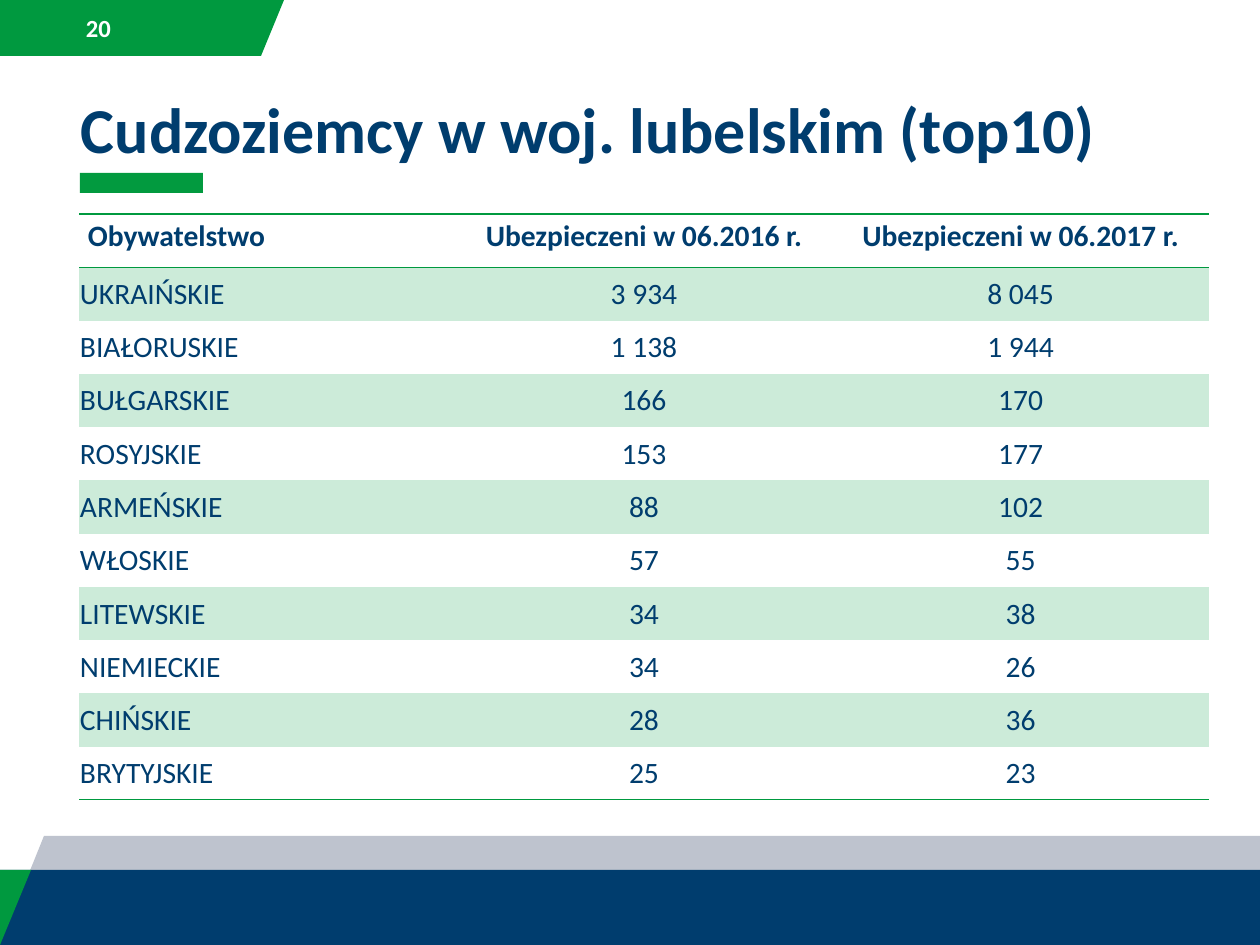
import pptx
import pptx.util
import pptx.dml.color
import pptx.enum.shapes
import pptx.enum.text
import pptx.oxml
import pptx.oxml.ns

PX = 10320
THEME = {
    "font": "Calibri",
    "green": "00993F", "accent": "029A3F", "navy": "003D6E",
    "grey": "BEC3CE", "band": "CCEBD9", "white": "FFFFFF",
    "title": 52, "cell": 24, "number": 20,
}
ALIGN = pptx.enum.text.PP_ALIGN
ANCHOR = pptx.enum.text.MSO_ANCHOR


def paint(shape, color):
    shape.shadow.inherit = False
    shape.fill.solid()
    shape.fill.fore_color.rgb = pptx.dml.color.RGBColor.from_string(THEME[color])
    shape.line.fill.background()


def style(para, size, color, bold):
    for span in para.runs:
        span.font.name = THEME["font"]
        span.font.size = pptx.util.Pt(THEME[size])
        span.font.bold = bold
        span.font.color.rgb = pptx.dml.color.RGBColor.from_string(THEME[color])


deck = pptx.Presentation()
deck.slide_width = 1260 * PX
deck.slide_height = 945 * PX
page = deck.slides.add_slide(deck.slide_layouts[6])

outlines = [
    ("green", [(0, 0), (284, 0), (261, 56), (0, 56)]),
    ("grey", [(0, 945), (44, 836), (1260, 836), (1260, 945)]),
    ("navy", [(0, 870), (1260, 870), (1260, 945), (0, 945)]),
    ("green", [(0, 870), (31, 870), (0, 945)]),
    ("accent", [(80, 173), (203, 173), (203, 193), (80, 193)]),
]
for color, points in outlines:
    xs, ys = zip(*points)
    left, top, right, bottom = min(xs), min(ys), max(xs), max(ys)
    if set(points) == {(left, top), (right, top), (right, bottom), (left, bottom)}:
        shape = page.shapes.add_shape(
            pptx.enum.shapes.MSO_SHAPE.RECTANGLE,
            left * PX, top * PX, (right - left) * PX, (bottom - top) * PX)
    else:
        builder = page.shapes.build_freeform(*points[0], scale=PX)
        builder.add_line_segments(points[1:], close=True)
        shape = builder.convert_to_shape()
    paint(shape, color)

labels = [
    ("20", (81, 8, 75, 40), (5, 5), ANCHOR.MIDDLE, "number", "white"),
    ("Cudzoziemcy w woj. lubelskim (top10)", (72, 82, 1144, 83), (9, 8),
     ANCHOR.TOP, "title", "navy"),
]
for text, place, (side, above), anchor, size, color in labels:
    box = page.shapes.add_textbox(*(length * PX for length in place))
    frame = box.text_frame
    frame.word_wrap = True
    frame.vertical_anchor = anchor
    frame.margin_left = frame.margin_right = side * PX
    frame.margin_top = above * PX
    frame.margin_bottom = 5 * PX
    frame.text = text
    style(frame.paragraphs[0], size, color, True)

rows = [
    ("Obywatelstwo", "Ubezpieczeni w 06.2016 r.", "Ubezpieczeni w 06.2017 r."),
    ("UKRAIŃSKIE", "3 934", "8 045"),
    ("BIAŁORUSKIE", "1 138", "1 944"),
    ("BUŁGARSKIE", "166", "170"),
    ("ROSYJSKIE", "153", "177"),
    ("ARMEŃSKIE", "88", "102"),
    ("WŁOSKIE", "57", "55"),
    ("LITEWSKIE", "34", "38"),
    ("NIEMIECKIE", "34", "26"),
    ("CHIŃSKIE", "28", "36"),
    ("BRYTYJSKIE", "25", "23"),
]
holder = page.shapes.add_table(len(rows), 3, 79 * PX, 214 * PX, 1130 * PX, 586 * PX)
for style_id in holder.element.iter(pptx.oxml.ns.qn("a:tableStyleId")):
    style_id.text = "{2D5ABB26-0587-4C30-8999-92F81FD0307C}"
table = holder.table
table.horz_banding = False

for row, values in enumerate(rows):
    header = row == 0
    edges = ["lnT", "lnB"] if header else ["lnB"] if row == len(rows) - 1 else []
    for column, value in enumerate(values):
        cell = table.cell(row, column)
        cell.text_frame.text = value
        para = cell.text_frame.paragraphs[0]
        para.alignment = ALIGN.CENTER if column else ALIGN.LEFT
        style(para, "cell", "navy", header)
        if not header:
            cell.vertical_anchor = ANCHOR.MIDDLE
            cell.margin_left = cell.margin_right = cell.margin_top = PX
            cell.margin_bottom = 0
        for edge in edges:
            cell._tc.get_or_add_tcPr().append(pptx.oxml.parse_xml(
                f'<a:{edge} {pptx.oxml.ns.nsdecls("a")} w="12700"><a:solidFill>'
                f'<a:srgbClr val="{THEME["green"]}"/></a:solidFill></a:{edge}>'))
        if row % 2:
            cell.fill.solid()
            cell.fill.fore_color.rgb = pptx.dml.color.RGBColor.from_string(THEME["band"])
        else:
            cell.fill.background()

deck.save("out.pptx")
